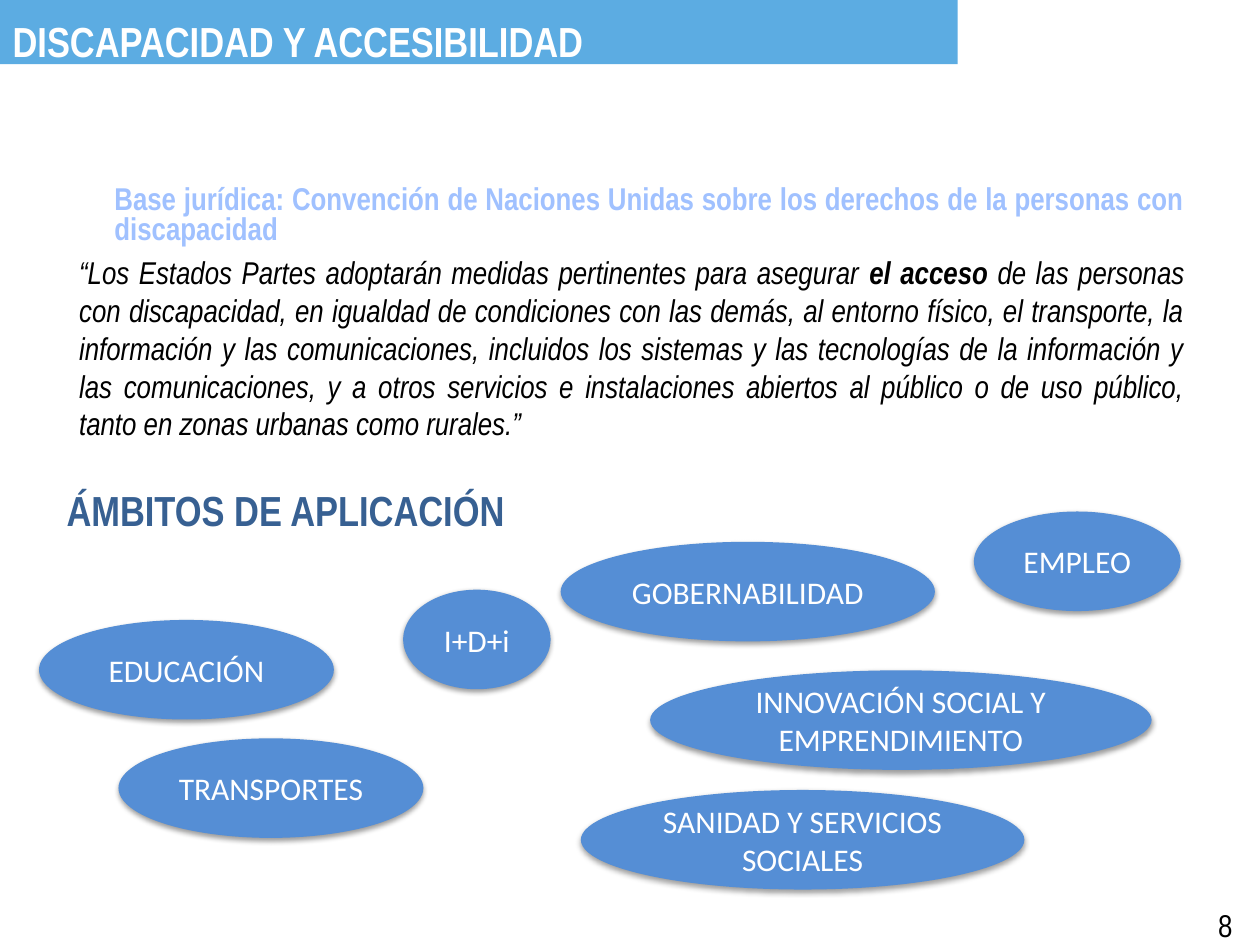
from dataclasses import dataclass

from lxml import etree
from pptx import Presentation
from pptx.dml.color import RGBColor
from pptx.enum import shapes, text
from pptx.oxml import ns
from pptx.util import Inches, Pt


@dataclass(frozen=True)
class Theme:
    bar: str = "5CACE2"
    bubble: str = "558ED5"
    lead: str = "A0C1FF"
    heading: str = "376092"
    dark: str = "000000"
    light: str = "FFFFFF"
    narrow: str = "Arial Narrow"
    bubble_font: str = "Calibri"
    body_size: int = 18
    heading_size: int = 24


class SlideBuilder:
    def __init__(self, slide, theme):
        self.slide = slide
        self.theme = theme

    def format_run(self, run, color, size=None, font=None, bold=False, italic=False):
        run.font.name = font or self.theme.narrow
        run.font.size = Pt(size or self.theme.body_size)
        run.font.color.rgb = RGBColor.from_string(color)
        run.font.bold = bold
        run.font.italic = italic

    def fill(self, shape, color):
        shape.fill.solid()
        shape.fill.fore_color.rgb = RGBColor.from_string(color)

    def soft_shadow(self, shape):
        """Add a faint shadow just below the shape."""
        effects = etree.SubElement(shape._element.spPr, ns.qn("a:effectLst"))
        shadow = etree.SubElement(
            effects, ns.qn("a:outerShdw"), blurRad=str(Pt(3.1)),
            dist=str(Pt(1.6)), dir="5400000", rotWithShape="0")
        color = etree.SubElement(shadow, ns.qn("a:srgbClr"), val=self.theme.dark)
        etree.SubElement(color, ns.qn("a:alpha"), val="38000")

    def title_bar(self, wording, width, height):
        title = self.slide.shapes.title
        title.left, title.top = Inches(0), Inches(0)
        title.width, title.height = Inches(width), Inches(height)
        self.fill(title, self.theme.bar)
        frame = title.text_frame
        frame.text = wording
        frame.auto_size = text.MSO_AUTO_SIZE.NONE
        frame.vertical_anchor = text.MSO_ANCHOR.TOP
        frame.margin_top = Inches(0.12)
        frame.margin_bottom = Inches(0)
        frame.paragraphs[0].alignment = text.PP_ALIGN.LEFT
        self.format_run(frame.paragraphs[0].runs[0], self.theme.light,
                        self.theme.heading_size, bold=True)

    def text_box(self, left, top, width, height):
        box = self.slide.shapes.add_textbox(
            Inches(left), Inches(top), Inches(width), Inches(height))
        box.text_frame.word_wrap = True
        return box.text_frame

    def paragraph(self, paragraph, pieces, indent=0, before=0, spacing=1.0):
        """Fill a justified paragraph from (wording, run format) pairs."""
        paragraph.alignment = text.PP_ALIGN.JUSTIFY
        paragraph.space_before = Pt(before)
        paragraph.line_spacing = spacing
        paragraph._p.get_or_add_pPr().set("marL", str(Inches(indent)))
        for wording, style in pieces:
            run = paragraph.add_run()
            run.text = wording
            self.format_run(run, **style)

    def bubble(self, wording, left, top, width, height=0.79):
        shape = self.slide.shapes.add_shape(
            shapes.MSO_SHAPE.OVAL,
            Inches(left), Inches(top), Inches(width), Inches(height))
        self.fill(shape, self.theme.bubble)
        shape.line.fill.background()
        self.soft_shadow(shape)
        frame = shape.text_frame
        frame.text = wording
        frame.word_wrap = True
        frame.vertical_anchor = text.MSO_ANCHOR.MIDDLE
        frame.paragraphs[0].alignment = text.PP_ALIGN.CENTER
        self.format_run(frame.paragraphs[0].runs[0], self.theme.light,
                        font=self.theme.bubble_font)

    def page_number(self, number):
        frame = self.text_box(9.57, 7.14, 0.4, 0.4)
        frame.text = str(number)
        self.format_run(frame.paragraphs[0].runs[0], self.theme.dark)


BUBBLES = [
    ("EDUCACIÓN", 0.31, 4.92, 2.34),
    ("SANIDAD Y SERVICIOS SOCIALES", 4.61, 6.27, 3.52),
    ("EMPLEO", 7.73, 4.06, 1.64),
    ("TRANSPORTES", 0.94, 5.86, 2.42),
    ("GOBERNABILIDAD", 4.45, 4.3, 2.97),
    ("I+D+i", 3.2, 4.68, 1.17),
    ("INNOVACIÓN SOCIAL Y EMPRENDIMIENTO", 5.16, 5.32, 3.98),
]


def main():
    presentation = Presentation()
    presentation.slide_width, presentation.slide_height = Inches(10), Inches(7.5)
    slide = presentation.slides.add_slide(presentation.slide_layouts[5])
    theme = Theme()
    builder = SlideBuilder(slide, theme)

    builder.title_bar("DISCAPACIDAD Y ACCESIBILIDAD", 7.6, 0.51)

    frame = builder.text_box(0.43, 1.43, 9.07, 2.95)
    quote = {"color": theme.dark, "italic": True}
    builder.paragraph(frame.paragraphs[0], [
        ("Base jurídica: Convención de Naciones Unidas sobre los derechos de la "
         "personas con discapacidad", {"color": theme.lead, "bold": True}),
    ], indent=0.38, spacing=0.8)
    builder.paragraph(frame.add_paragraph(), [
        ("“Los Estados Partes adoptarán medidas pertinentes para asegurar ", quote),
        ("el acceso ", {**quote, "bold": True}),
        ("de las personas con discapacidad, en igualdad de condiciones con las "
         "demás, al entorno físico, el transporte, la información y las "
         "comunicaciones, incluidos los sistemas y las tecnologías de la "
         "información y las comunicaciones, y a otros servicios e instalaciones "
         "abiertos al público o de uso público, tanto en zonas urbanas como "
         "rurales.”", quote),
    ], indent=0.1, before=3.6)
    builder.paragraph(frame.add_paragraph(), [
        ("ÁMBITOS DE APLICACIÓN",
         {"color": theme.heading, "size": theme.heading_size, "bold": True}),
    ], before=30, spacing=0.8)

    for bubble in BUBBLES:
        builder.bubble(*bubble)
    builder.page_number(8)

    presentation.save("out.pptx")


if __name__ == "__main__":
    main()
